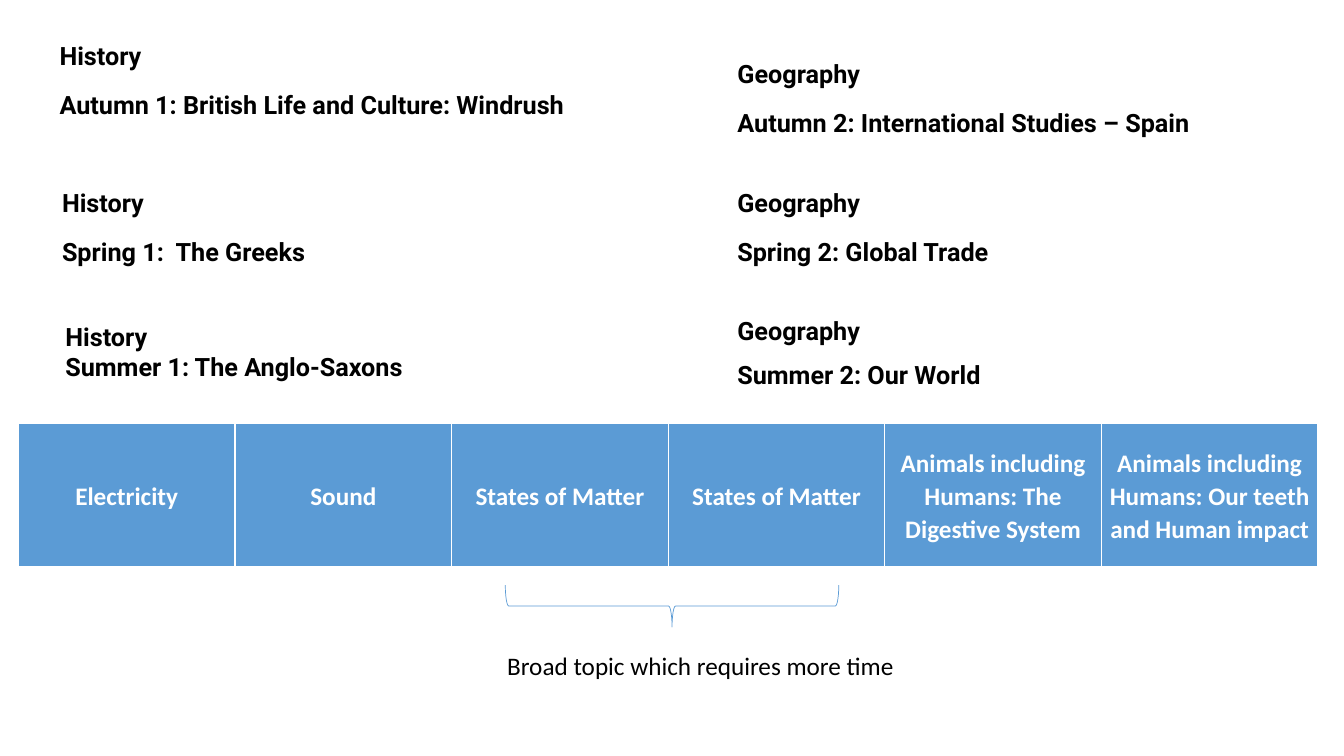
from lxml.etree import SubElement
from pptx import Presentation
from pptx.dml.color import RGBColor
from pptx.enum.shapes import MSO_SHAPE
from pptx.enum.text import MSO_ANCHOR, MSO_AUTO_SIZE, PP_ALIGN
from pptx.oxml.ns import qn
from pptx.util import Inches, Pt

COLUMNS, ROWS = 16, 9


def colour(hex_string):
    return RGBColor.from_string(hex_string)


class CurriculumSlide:
    BLUE, WHITE, BLACK = "5B9BD5", "FFFFFF", "000000"
    HEADING_FONT, BODY_FONT = "Roboto", "Calibri"
    TEXT_SIZE = Pt(18)

    def __init__(self, presentation):
        self.column = presentation.slide_width / COLUMNS
        self.row = presentation.slide_height / ROWS
        self.slide = presentation.slides.add_slide(presentation.slide_layouts[6])

    def place(self, left, top, width, height):
        return (round(left * self.column), round(top * self.row),
                round(width * self.column), round(height * self.row))

    def style(self, paragraph, font, ink, bold, spacing=None, after=None):
        if spacing:
            paragraph.line_spacing = spacing
        if after:
            paragraph.space_after = Pt(after)
        for run in paragraph.runs:
            run.font.name, run.font.size, run.font.bold = font, self.TEXT_SIZE, bold
            run.font.color.rgb = colour(ink)

    def text(self, lines, area, font, bold=False, spacings=(None, None)):
        frame = self.slide.shapes.add_textbox(*self.place(*area)).text_frame
        frame.word_wrap = True
        frame.auto_size = MSO_AUTO_SIZE.SHAPE_TO_FIT_TEXT
        frame.text = "\n".join(lines)
        for paragraph, spacing in zip(frame.paragraphs, spacings):
            self.style(paragraph, font, self.BLACK, bold, spacing, 10 if spacing else None)

    def borders(self, cell):
        properties = cell._tc.get_or_add_tcPr()
        for side, points in (("L", 1), ("R", 1), ("T", 1), ("B", 3)):
            line = SubElement(properties, qn(f"a:ln{side}"), w=str(Pt(points)))
            fill = SubElement(line, qn("a:solidFill"))
            SubElement(fill, qn("a:srgbClr"), val=self.WHITE)

    def topic_row(self, topics, area):
        table = self.slide.shapes.add_table(1, len(topics), *self.place(*area)).table
        for cell, topic in zip(table.rows[0].cells, topics):
            self.borders(cell)
            cell.fill.solid()
            cell.fill.fore_color.rgb = colour(self.BLUE)
            cell.margin_left = cell.margin_right = Inches(0.07)
            cell.margin_top = cell.margin_bottom = 0
            cell.vertical_anchor = MSO_ANCHOR.MIDDLE
            cell.text_frame.text = topic
            paragraph = cell.text_frame.paragraphs[0]
            paragraph.alignment = PP_ALIGN.CENTER
            self.style(paragraph, self.BODY_FONT, self.WHITE, True, 1.07, 8)

    def brace(self, area):
        brace = self.slide.shapes.add_shape(MSO_SHAPE.RIGHT_BRACE, *self.place(*area))
        brace.rotation = 90
        brace.shadow.inherit = False
        brace.fill.background()
        brace.line.color.rgb = colour(self.BLUE)
        brace.line.width = Pt(0.5)


def main():
    presentation = Presentation()
    presentation.slide_width = Inches(13.33)
    presentation.slide_height = Inches(7.5)
    curriculum = CurriculumSlide(presentation)

    # Humanities units: subject, unit, left, top, width, line spacings
    airy, half_airy, tight = (1.15, 1.15), (1.15, None), (None, None)
    units = [
        ("History", "Autumn 1: British Life and Culture: Windrush", 0.59, 0.37, 7.36, airy),
        ("Geography", "Autumn 2: International Studies – Spain", 8.66, 0.58, 8.03, airy),
        ("History", "Spring 1:  The Greeks", 0.62, 2.12, 8.03, airy),
        ("Geography", "Spring 2: Global Trade", 8.66, 2.12, 8.47, airy),
        ("History", "Summer 1: The Anglo-Saxons", 0.66, 3.76, 8.47, tight),
        ("Geography", "Summer 2: Our World", 8.66, 3.64, 8.47, half_airy),
    ]
    heights = {airy: 1.09, half_airy: 1.07, tight: 0.85}
    for subject, unit, left, top, width, spacings in units:
        curriculum.text((subject, unit), (left, top, width, heights[spacings]),
                        curriculum.HEADING_FONT, True, spacings)

    # Science topics
    curriculum.topic_row([
        "Electricity", "Sound", "States of Matter", "States of Matter",
        "Animals including Humans: The Digestive System",
        "Animals including Humans: Our teeth and Human impact",
    ], (0.22, 5.04, 15.47, 1.72))

    # Note under the double topic
    curriculum.brace((7.75, 5.23, 0.5, 3.97))
    curriculum.text(["Broad topic which requires more time"],
                    (5.92, 7.68, 6.46, 0.48), curriculum.BODY_FONT)

    presentation.save("out.pptx")


if __name__ == "__main__":
    main()
